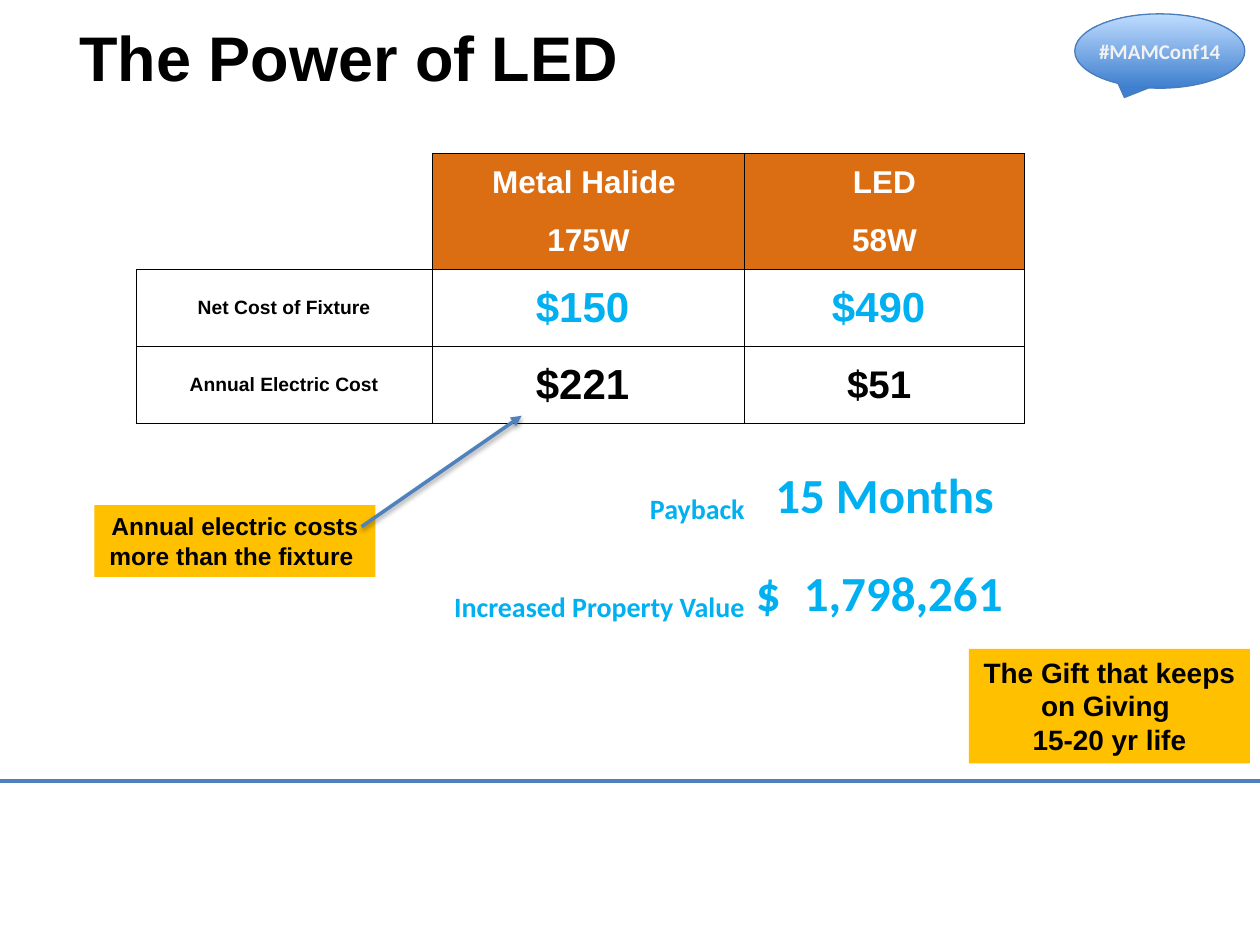
from lxml.etree import SubElement
from pptx import Presentation
from pptx.dml.color import RGBColor
from pptx.enum.shapes import MSO_CONNECTOR, MSO_SHAPE
from pptx.enum.text import MSO_ANCHOR, PP_ALIGN
from pptx.oxml.ns import qn
from pptx.util import Inches, Pt

BLACK = RGBColor(0, 0, 0)
WHITE = RGBColor(255, 255, 255)
PALE = RGBColor(0xF2, 0xF2, 0xF2)
CYAN = RGBColor(0x00, 0xB0, 0xF0)
BLUE = RGBColor(0x4F, 0x81, 0xBD)
EDGE = RGBColor(0x4A, 0x7D, 0xBB)
DEEP = RGBColor(0x3E, 0x7F, 0xCE)
SKY = RGBColor(0xBF, 0xDC, 0xFF)
GOLD = RGBColor(0xFF, 0xC0, 0x00)
RUST = RGBColor(0xDB, 0x6D, 0x13)

TITLE = "The Power of LED"
TAG = "#MAMConf14"
HEAD = ("Arial", 18, WHITE)
LABEL = ("Arial", 11, BLACK)
COST = ("Arial", 24, CYAN)
POWER = ("Arial", 24, BLACK)
NAME = ("Calibri", 16, CYAN)
GAIN = ("Calibri", 28, CYAN)
ROWS = [
    (0.46, [None, ("Metal Halide ", HEAD), ("LED", HEAD)]),
    (0.46, [None, ("175W", HEAD), ("58W", HEAD)]),
    (0.61, [("Net Cost of Fixture", LABEL), ("$150 ", COST), ("$490 ", COST)]),
    (0.61, [("Annual Electric Cost", LABEL), ("$221 ", POWER),
            ("$51 ", ("Arial", 22, BLACK))]),
    (0.29, [None, None, None]),
    (0.53, [None, ("Payback", NAME), ("15 Months", GAIN)]),
    (0.78, [None, ("Increased Property Value", NAME), ("$\t1,798,261", GAIN)]),
]
COLS = [2.35, 2.48, 2.22]
NOTES = [
    ((0.75, 4.01, 2.23, 0.57), 14, ["Annual electric costs more than the fixture "]),
    ((7.69, 5.15, 2.23, 0.91), 16, ["The Gift that keeps on Giving ", "15-20 yr life"]),
]


def style(para, font, size, color, align=PP_ALIGN.CENTER):
    para.alignment = align
    for run in para.runs:
        run.font.name, run.font.size, run.font.bold = font, Pt(size), True
        run.font.color.rgb = color


def place(item, box):
    item.left, item.top, item.width, item.height = map(Inches, box)


def line(x1, y1, x2, y2):
    rule = slide.shapes.add_connector(
        MSO_CONNECTOR.STRAIGHT, *map(Inches, (x1, y1, x2, y2)))
    rule.line.color.rgb = BLUE
    rule.line.width = Pt(2)
    return rule, SubElement(rule._element.spPr, qn("a:effectLst"))


def border(cell, sides):
    props = cell._tc.get_or_add_tcPr()
    for side in "LRTB":
        edge = SubElement(props, qn("a:ln" + side), w="6350")
        if side in sides:
            fill = SubElement(edge, qn("a:solidFill"))
            SubElement(fill, qn("a:srgbClr"), val=str(BLACK))
        else:
            SubElement(edge, qn("a:noFill"))


def edges(row, col):
    if row > 4 or (row < 2 and col == 0):
        return "RB" if row < 2 else ""
    return {0: "LRT", 1: "LRB", 4: "T"}.get(row, "LRTB")


def fill_cell(cell, row, col, item):
    cell.margin_left = cell.margin_right = cell.margin_top = cell.margin_bottom = 0
    cell.vertical_anchor = MSO_ANCHOR.BOTTOM if row > 4 else MSO_ANCHOR.MIDDLE
    border(cell, edges(row, col))
    if row < 2 and col:
        cell.fill.solid()
        cell.fill.fore_color.rgb = RUST
    else:
        cell.fill.background()
    para = cell.text_frame.paragraphs[0]
    if item is None:
        SubElement(para._p, qn("a:endParaRPr"), sz="1000")
        return
    text, look = item
    align = PP_ALIGN.RIGHT if look is NAME else PP_ALIGN.CENTER
    if "\t" in text:
        align = PP_ALIGN.LEFT
        cell.margin_left = Inches(0.09)
        tabs = SubElement(para._p.get_or_add_pPr(), qn("a:tabLst"))
        SubElement(tabs, qn("a:tab"), pos=str(Inches(0.38)), algn="l")
    para.text = text
    style(para, *look, align)


deck = Presentation()
deck.slide_width, deck.slide_height = Inches(10), Inches(7.5)
slide = deck.slides.add_slide(deck.slide_layouts[5])

call = slide.shapes.add_shape(
    MSO_SHAPE.OVAL_CALLOUT, *map(Inches, (8.53, 0.11, 1.35, 0.59)))
call.adjustments[0], call.adjustments[1] = -0.208, 0.625
call.shadow.inherit = False
call.fill.gradient()
call.fill.gradient_angle = 90
for stop, tone, spot in zip(call.fill.gradient_stops, (DEEP, SKY), (0, 1)):
    stop.color.rgb, stop.position = tone, spot
call.line.color.rgb = EDGE
call.line.width = Pt(0.75)
frame = call.text_frame
frame.text = TAG
frame.word_wrap = False
frame.vertical_anchor = MSO_ANCHOR.MIDDLE
style(frame.paragraphs[0], "Calibri", 12, PALE)

line(-0.09, 6.2, 10.06, 6.2)

title = slide.shapes.title
place(title, (0.53, 0.09, 6.92, 0.71))
title.text_frame.text = TITLE
title.text_frame.vertical_anchor = MSO_ANCHOR.MIDDLE
style(title.text_frame.paragraphs[0], "Arial", 36, BLACK, PP_ALIGN.LEFT)

high = sum(size for size, _ in ROWS)
grid = slide.shapes.add_table(
    len(ROWS), len(COLS), *map(Inches, (1.08, 1.22, sum(COLS), high))).table
grid.first_row = grid.horz_banding = False
for col, wide in zip(grid.columns, COLS):
    col.width = Inches(wide)
for r, (size, items) in enumerate(ROWS):
    grid.rows[r].height = Inches(size)
    for c, item in enumerate(items):
        fill_cell(grid.cell(r, c), r, c, item)
grid.cell(0, 0).merge(grid.cell(1, 0))

for box, size, lines in NOTES:
    note = slide.shapes.add_shape(MSO_SHAPE.RECTANGLE, *map(Inches, box))
    note.shadow.inherit = False
    note.fill.solid()
    note.fill.fore_color.rgb = GOLD
    note.line.fill.background()
    frame = note.text_frame
    frame.word_wrap = True
    frame.vertical_anchor = MSO_ANCHOR.TOP
    frame.text = "\n".join(lines)
    for para in frame.paragraphs:
        style(para, "Arial", size, BLACK)

arrow, effect = line(2.87, 4.18, 4.14, 3.3)
SubElement(arrow.line._get_or_add_ln(), qn("a:tailEnd"), type="triangle")
shade = SubElement(effect, qn("a:outerShdw"), blurRad=str(Pt(3.1)),
                   dist=str(Pt(1.6)), dir="5400000", rotWithShape="0")
tint = SubElement(shade, qn("a:srgbClr"), val=str(BLACK))
SubElement(tint, qn("a:alpha"), val="38000")

deck.save("out.pptx")
